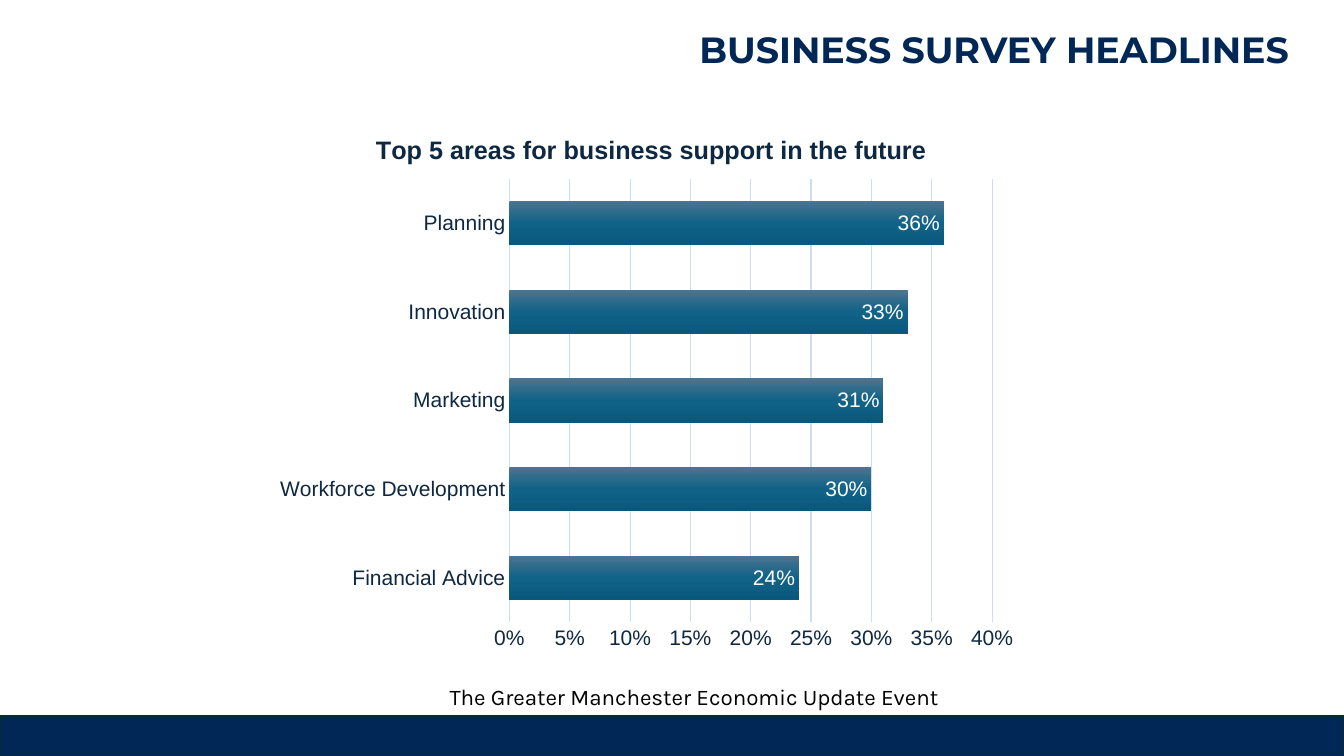
from lxml import etree
from pptx import Presentation
from pptx.chart.data import CategoryChartData
from pptx.dml.color import RGBColor
from pptx.enum.chart import XL_CHART_TYPE as ChartType, XL_LABEL_POSITION as LabelPosition
from pptx.enum.chart import XL_TICK_MARK as TickMark
from pptx.enum.shapes import MSO_SHAPE as Shape
from pptx.enum.text import MSO_ANCHOR as Anchor, MSO_AUTO_SIZE as AutoSize, PP_ALIGN as Align
from pptx.oxml import parse_xml
from pptx.oxml.ns import nsdecls, qn
from pptx.util import Inches, Pt

HEADING = "BUSINESS SURVEY HEADLINES"
FOOTER = "The Greater Manchester Economic Update Event"
CHART_TITLE = "Top 5 areas for business support in the future"
SUPPORT_AREAS = [
    ("Financial Advice", 0.24),
    ("Workforce Development", 0.30),
    ("Marketing", 0.31),
    ("Innovation", 0.33),
    ("Planning", 0.36),
]
COLORS = {
    "navy": "002756", "edge": "092A39", "ink": "0E2841", "grid": "CADFF4",
    "black": "000000", "white": "FFFFFF",
}
BAR_GRADIENT = [(0, "4C7591"), (50, "106287"), (100, "09597D")]
WIDTH, HEIGHT, BAND = 13.33, 7.5, 0.4
# Shares of the chart's size
TITLE_PLACE = {"x": 0.14, "y": 0.04}
PLOT_PLACE = {"x": 0.32, "y": 0.13, "w": 0.63, "h": 0.8}


def color(name):
    return RGBColor.from_string(COLORS[name])


def style(font, size, name, face="Arial", bold=False):
    font.size, font.name, font.bold = Pt(size), face, bold
    font.color.rgb = color(name)


def add_text(page, place, text, wrap):
    box = page.shapes.add_textbox(*map(Inches, place))
    box.text_frame.word_wrap = wrap
    box.text_frame.auto_size = AutoSize.SHAPE_TO_FIT_TEXT
    para = box.text_frame.paragraphs[0]
    para.text = text
    return box.text_frame, para


def manual_layout(place, inner=False):
    """Return a c:layout element that fixes a chart part at shares of the chart."""
    layout = etree.Element(qn("c:layout"))
    manual = etree.SubElement(layout, qn("c:manualLayout"))
    settings = [("layoutTarget", "inner")] if inner else []
    settings += [(f"{key}Mode", "edge") for key in ("x", "y")]
    settings += place.items()
    for tag, value in settings:
        etree.SubElement(manual, qn(f"c:{tag}")).set("val", str(value))
    return layout


def fill_gradient(series):
    stops = "".join(
        f'<a:gs pos="{share * 1000}"><a:srgbClr val="{tone}"/></a:gs>'
        for share, tone in BAR_GRADIENT)
    series.format.fill.background()
    properties = series.format.fill._xPr
    properties.replace(properties.find(qn("a:noFill")), parse_xml(
        f'<a:gradFill {nsdecls("a")} rotWithShape="1"><a:gsLst>{stops}</a:gsLst>'
        '<a:lin ang="5400000" scaled="0"/></a:gradFill>'))


def draw_line(line):
    line.color.rgb = color("grid")
    line.width = Pt(0.75)


def add_survey_chart(page):
    data = CategoryChartData(number_format="0%")
    data.categories = [area for area, _ in SUPPORT_AREAS]
    data.add_series("Series 1", [share for _, share in SUPPORT_AREAS])
    place = map(Inches, (2.62, 1.06, 7.6, 5.5))
    chart = page.shapes.add_chart(ChartType.BAR_CLUSTERED, *place, data).chart
    chart.has_legend = False
    style(chart.font, 15, "black")

    chart.has_title = True
    para = chart.chart_title.text_frame.paragraphs[0]
    para.text = CHART_TITLE
    style(para.font, 18, "ink", bold=True)
    title = chart.chart_title._element
    for old in title.findall(qn("c:layout")):
        title.remove(old)
    title.find(qn("c:tx")).addnext(manual_layout(TITLE_PLACE))
    plot_area = chart._chartSpace.chart.plotArea
    for old in plot_area.findall(qn("c:layout")):
        plot_area.remove(old)
    plot_area.insert(0, manual_layout(PLOT_PLACE, inner=True))

    for axis in (chart.category_axis, chart.value_axis):
        axis.major_tick_mark = axis.minor_tick_mark = TickMark.NONE
        style(axis.tick_labels.font, 15, "ink")
    draw_line(chart.category_axis.format.line)
    values = chart.value_axis
    values.minimum_scale, values.maximum_scale, values.major_unit = 0, 0.4, 0.05
    values.tick_labels.number_format = "0%"
    values.tick_labels.number_format_is_linked = False
    values.format.line.fill.background()
    draw_line(values.major_gridlines.format.line)

    plot = chart.plots[0]
    plot.gap_width, plot.vary_by_categories = 100, False
    series = plot.series[0]
    fill_gradient(series)
    labels = series.data_labels
    labels.show_value, labels.position = True, LabelPosition.INSIDE_END
    labels.number_format, labels.number_format_is_linked = "0%", False
    style(labels.font, 15, "white")


def main():
    deck = Presentation()
    deck.slide_width, deck.slide_height = Inches(WIDTH), Inches(HEIGHT)
    page = deck.slides.add_slide(deck.slide_layouts[6])

    band = page.shapes.add_shape(
        Shape.RECTANGLE, 0, Inches(HEIGHT - BAND), Inches(WIDTH), Inches(BAND))
    band.shadow.inherit = False
    band.fill.solid()
    band.fill.fore_color.rgb = color("navy")
    band.line.color.rgb = color("edge")
    band.line.width = Pt(1.5)

    _, para = add_text(page, (4.36, 6.73, 5.15, 0.37), FOOTER, wrap=False)
    style(para.font, 16, "black", "Karla")

    frame, para = add_text(page, (6.67, 0.22, 6.22, 0.54), HEADING, wrap=True)
    frame.vertical_anchor = Anchor.MIDDLE
    para.alignment = Align.RIGHT
    para.space_after = Pt(3)
    style(para.font, 26, "navy", "Montserrat", bold=True)

    add_survey_chart(page)
    deck.save("out.pptx")


if __name__ == "__main__":
    main()
